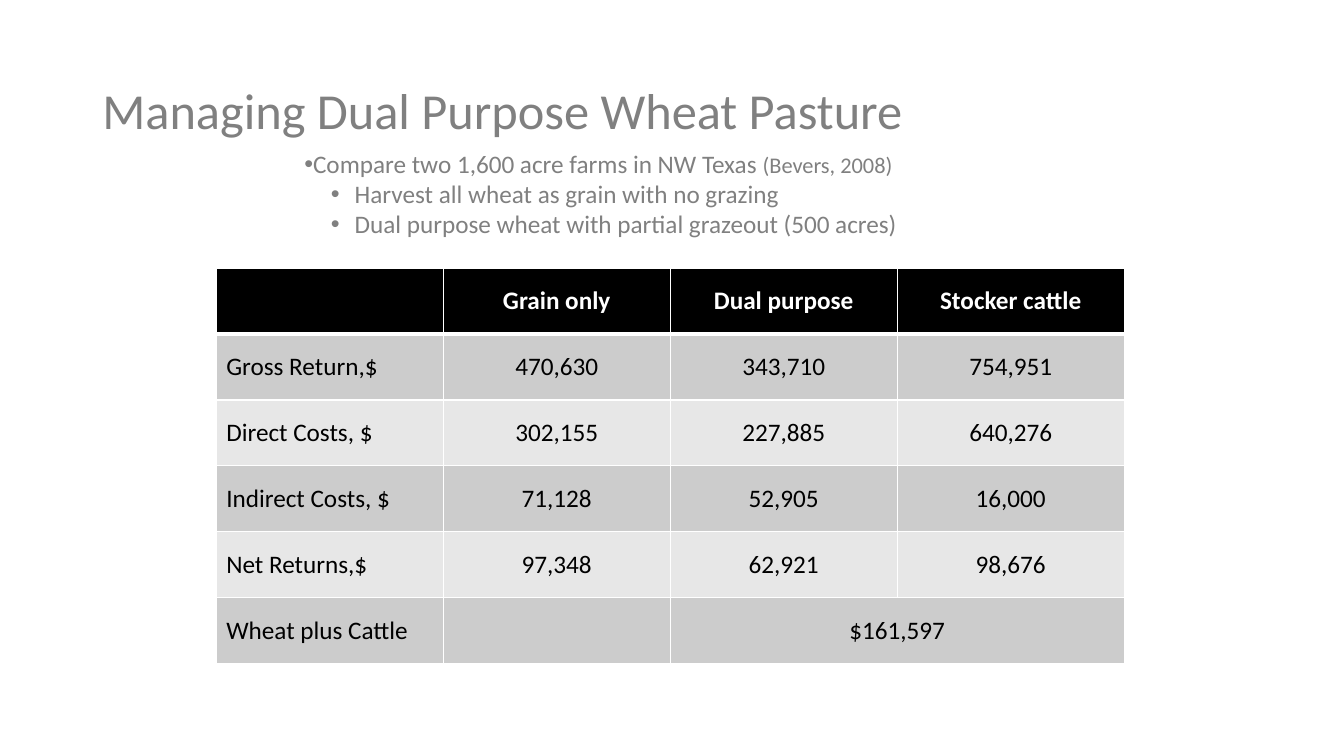
import pptx
import pptx.util
import pptx.dml.color
import pptx.enum.text
import lxml.etree
from pptx.util import Cm, Pt

ALIGN = pptx.enum.text.PP_ALIGN
MIDDLE = pptx.enum.text.MSO_ANCHOR.MIDDLE
NS = "{http://schemas.openxmlformats.org/drawingml/2006/main}"


def rgb(value):
    return pptx.dml.color.RGBColor.from_string(value)


def add_text(p, text, size=18, color="808080", bold=False, align=ALIGN.LEFT):
    p.alignment = align
    r = p.add_run()
    r.text = text
    r.font.name = "Calibri"
    r.font.size = Pt(size)
    r.font.bold = bold
    r.font.color.rgb = rgb(color)


prs = pptx.Presentation()
prs.slide_width, prs.slide_height = Cm(33.87), Cm(19.05)
s = prs.slides.add_slide(prs.slide_layouts[6])

# Title
tf = s.shapes.add_textbox(Cm(2.33), Cm(1.01), Cm(29.21), Cm(3.68)).text_frame
tf.word_wrap = True
tf.vertical_anchor = MIDDLE
tf.paragraphs[0].line_spacing = 0.9
add_text(tf.paragraphs[0], "Managing Dual Purpose Wheat Pasture", size=36)

# Table of returns
rows = [
    ["", "Grain only", "Dual purpose", "Stocker cattle"],
    ["Gross Return,$", "470,630", "343,710", "754,951"],
    ["Direct Costs, $", "302,155", "227,885", "640,276"],
    ["Indirect Costs, $", "71,128", "52,905", "16,000"],
    ["Net Returns,$", "97,348", "62,921", "98,676"],
    ["Wheat plus Cattle", "", "$161,597", ""],
]
table = s.shapes.add_table(len(rows), 4, Cm(5.45), Cm(6.76), Cm(22.88), Cm(9.96)).table
table.cell(5, 2).merge(table.cell(5, 3))
for column in table.columns:
    column.width = Cm(5.72)
for i, row in enumerate(rows):
    table.rows[i].height = Cm(1.66)
    header = i == 0
    fill = "000000" if header else "CCCCCC" if i % 2 else "E7E7E7"
    for j, text in enumerate(row):
        cell = table.cell(i, j)
        cell.vertical_anchor = MIDDLE
        # White rules, thicker under the header
        tcPr = cell._tc.get_or_add_tcPr()
        for side in "LRTB":
            thick = (i, side) in [(0, "B"), (1, "T")]
            ln = lxml.etree.SubElement(tcPr, f"{NS}ln{side}", w=str(Pt(3 if thick else 1)))
            line_fill = lxml.etree.SubElement(ln, f"{NS}solidFill")
            lxml.etree.SubElement(line_fill, f"{NS}srgbClr", val="FFFFFF")
        cell.fill.solid()
        cell.fill.fore_color.rgb = rgb(fill)
        if text:
            add_text(cell.text_frame.paragraphs[0], text, bold=header,
                     color="FFFFFF" if header else "000000",
                     align=ALIGN.CENTER if j else ALIGN.LEFT)

# Farm comparison: level, then runs with their sizes
points = [
    (0, [("Compare two 1,600 acre farms in NW Texas ", 18), ("(Bevers, 2008)", 16)]),
    (1, [("Harvest all wheat as grain with no grazing", 18)]),
    (1, [("Dual purpose wheat with partial grazeout (500 acres)", 18)]),
]
tf = s.shapes.add_textbox(Cm(7.42), Cm(3.61), Cm(19.08), Cm(2.57)).text_frame
tf.word_wrap = True
for i, (level, runs) in enumerate(points):
    p = tf.add_paragraph() if i else tf.paragraphs[0]
    p.level = level
    pPr = p._p.get_or_add_pPr()
    pPr.set("marL", str(Cm(1.27 * level)))
    pPr.set("indent", str(-Cm(0.6 * level)))
    lxml.etree.SubElement(pPr, f"{NS}buFont", typeface="Arial")
    lxml.etree.SubElement(pPr, f"{NS}buChar", char="•")
    for text, size in runs:
        add_text(p, text, size=size)

prs.save("out.pptx")
